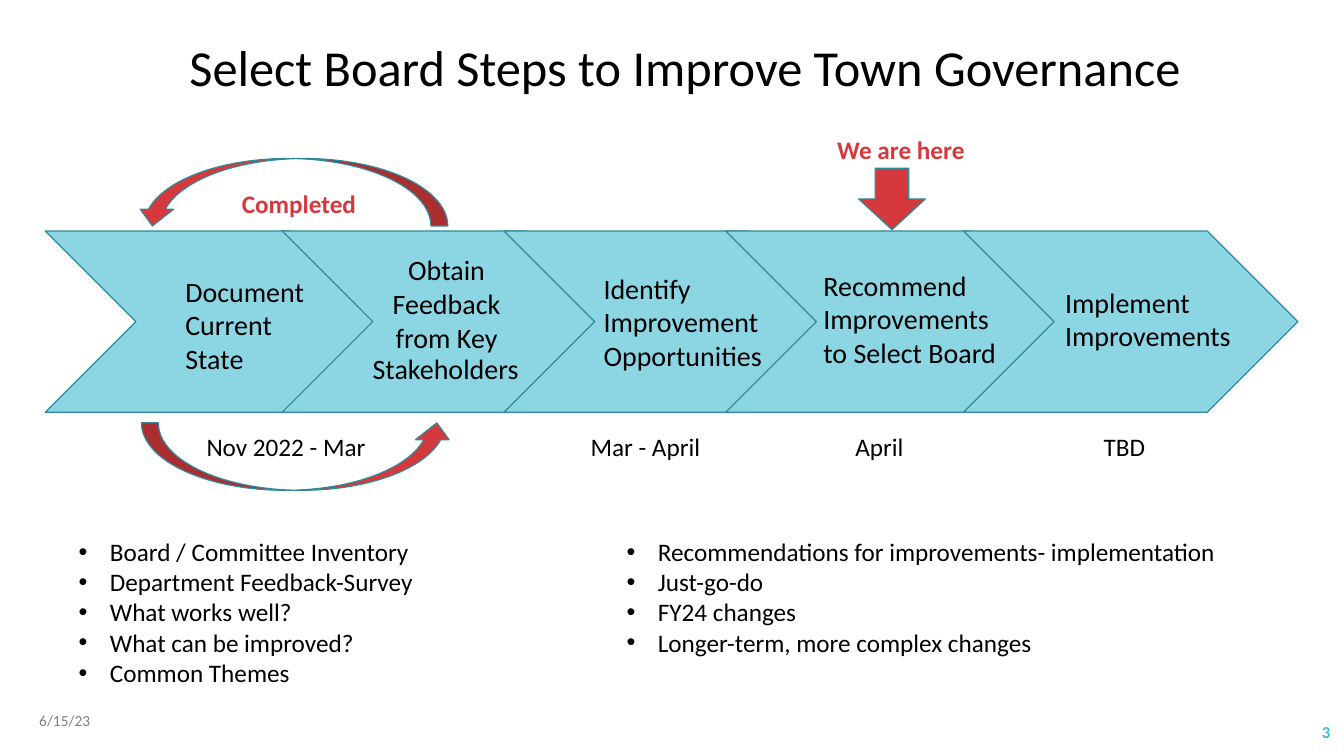
from pptx import Presentation
from pptx import util as u
from pptx.dml.color import RGBColor
from pptx.enum import shapes, text
from pptx.oxml.ns import qn
from lxml import etree

COLOURS = {
    "step": "8CD6E4",
    "outline": "2F8A9B",
    "accent": "D5393D",
    "ink": "000000",
    "date": "808080",
    "number": "40BAD2",
}
LEFT, CENTRE, RIGHT = text.PP_ALIGN.LEFT, text.PP_ALIGN.CENTER, text.PP_ALIGN.RIGHT
SHAPE = shapes.MSO_SHAPE

deck = Presentation()
deck.slide_width, deck.slide_height = u.Cm(33.87), u.Cm(19.05)
slide = deck.slides.add_slide(deck.slide_layouts[6])


def add_text(box, wording, size, colour="ink", align=LEFT, bold=False, wrap=True):
    frame = slide.shapes.add_textbox(*map(u.Cm, box)).text_frame
    frame.word_wrap = wrap
    frame.text = wording
    for paragraph in frame.paragraphs:
        paragraph.alignment = align
        for run in paragraph.runs:
            run.font.name = "Calibri"
            run.font.size = u.Pt(size)
            run.font.bold = bold
            run.font.color.rgb = RGBColor.from_string(COLOURS[colour])
    return frame


def add_figure(kind, box, colour, rotation=0):
    figure = slide.shapes.add_shape(kind, *map(u.Cm, box))
    figure.shadow.inherit = False
    figure.fill.solid()
    figure.fill.fore_color.rgb = RGBColor.from_string(COLOURS[colour])
    figure.line.color.rgb = RGBColor.from_string(COLOURS["outline"])
    figure.line.width = u.Pt(0.85)
    figure.rotation = rotation


add_text((2.64, 0.79, 29.26, 1.8), "Select Board Steps to Improve Town Governance", 36, align=CENTRE)

steps = [
    (1.14, (4.42, 6.78, 4.17, 2.82), "Document Current State", LEFT),
    (7.11, (9.17, 6.25, 4.17, 2.82), "Obtain Feedback from Key", CENTRE),
    (12.7, (14.96, 6.71, 4.93, 2.82), "Identify Improvement\nOpportunities", LEFT),
    (18.29, (20.5, 6.63, 4.98, 2.82), "Recommend Improvements to Select Board", LEFT),
    (24.28, (26.59, 7.06, 4.85, 1.96), "Implement Improvements", LEFT),
]
for step_left, label_box, label, align in steps:
    add_figure(SHAPE.CHEVRON, (step_left, 5.82, 8.43, 4.57), "step")
    add_text(label_box, label, 20, align=align)
add_text((9.14, 8.74, 4.55, 1.12), "Stakeholders", 20)

add_figure(SHAPE.CURVED_RIGHT_ARROW, (6.5, 0.91, 1.7, 7.87), "accent", 90)
add_figure(SHAPE.CURVED_RIGHT_ARROW, (6.65, 7.57, 1.7, 7.87), "accent", 270)
add_text((5.49, 4.62, 4.09, 1.02), "Completed", 18, "accent", CENTRE, bold=True)
add_text((20.85, 3.25, 3.78, 1.02), "We are here", 18, "accent", bold=True, wrap=False)
add_figure(SHAPE.DOWN_ARROW, (21.64, 4.24, 1.68, 1.55), "accent")

timings = [
    (4.85, 4.72, "Nov 2022 - Mar"),
    (14.22, 4.09, "Mar - April"),
    (20.12, 4.09, "April"),
    (26.29, 4.09, "TBD"),
]
for timing_left, width, timing in timings:
    add_text((timing_left, 10.74, width, 1.02), timing, 18, align=CENTRE)

findings = [
    "Board / Committee Inventory",
    "Department Feedback-Survey",
    "What works well?",
    "What can be improved?",
    "Common Themes",
]
outcomes = [
    "Recommendations for improvements- implementation",
    "Just-go-do",
    "FY24 changes",
    "Longer-term, more complex changes",
]
for box, points in [
    ((1.73, 13.39, 12.5, 4.11), findings),
    ((15.54, 13.39, 15.8, 4.11), outcomes),
]:
    for point in add_text(box, "\n".join(points), 18).paragraphs:
        properties = point._p.get_or_add_pPr()
        properties.set("marL", str(u.Cm(0.79)))
        properties.set("indent", str(-u.Cm(0.79)))
        etree.SubElement(properties, qn("a:buFont")).set("typeface", "Arial")
        etree.SubElement(properties, qn("a:buChar")).set("char", "•")

date = add_text((0.74, 17.65, 7.62, 1.02), "6/15/23", 11, "date")
number = add_text((29.54, 17.93, 4.24, 1.02), "3", 12, "number", RIGHT, bold=True)
for footer in (date, number):
    footer.vertical_anchor = text.MSO_ANCHOR.MIDDLE

deck.save("out.pptx")
